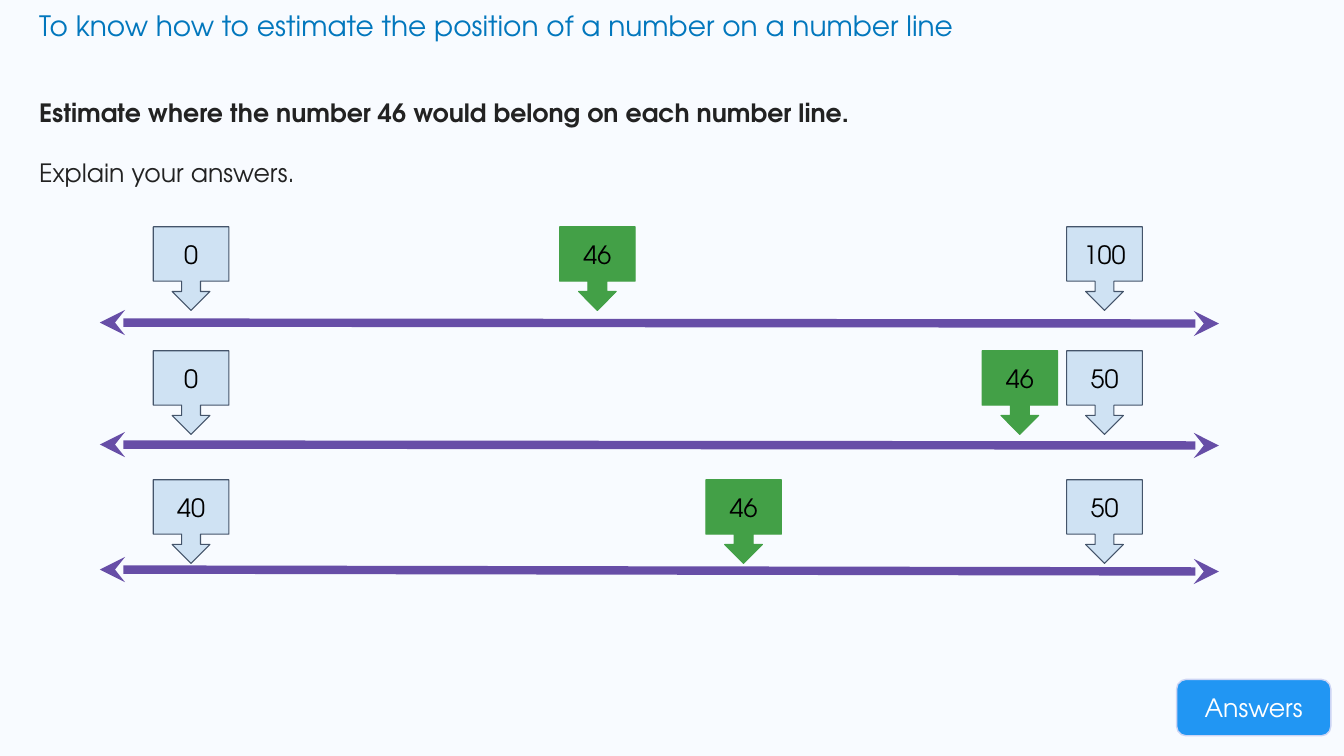
"""Build a slide on estimating the position of 46 on three number lines."""
from lxml import etree
from pptx import Presentation
from pptx.dml.color import RGBColor
from pptx.enum import shapes, text
from pptx.oxml import ns
from pptx.util import Inches, Pt

FONT = "TeX Gyre Adventor"
BACKGROUND = RGBColor(0xF8, 0xFB, 0xFF)
TITLE_BLUE = RGBColor(0x02, 0x77, 0xBD)
INK = RGBColor(0x22, 0x22, 0x22)
BLACK = RGBColor(0, 0, 0)
WHITE = RGBColor(0xFF, 0xFF, 0xFF)
BUTTON_BLUE = RGBColor(0x21, 0x96, 0xF3)
BUTTON_EDGE = RGBColor(0xCC, 0xD4, 0xF4)
PURPLE = RGBColor(0x67, 0x4E, 0xA7)
PALE_BLUE = RGBColor(0xCF, 0xE2, 0xF3)
SLATE = RGBColor(0x44, 0x54, 0x6A)
GREEN = RGBColor(0x43, 0xA0, 0x47)

START_LEFT, END_LEFT = 1.52, 10.58
NUMBER_LINES = [
    {"top": 2.25, "line": (3.2, 3.21), "ends": ("0", "100"), "answer_left": 5.55},
    {"top": 3.48, "line": (4.41, 4.42), "ends": ("0", "50"), "answer_left": 9.74},
    {"top": 4.76, "line": (5.65, 5.67), "ends": ("40", "50"), "answer_left": 7},
]


def write(paragraph, words, color, size=18, **formats):
    """Put words in a paragraph and format it."""
    span = paragraph.add_run()
    span.text = words
    span.font.name = FONT
    span.font.size = Pt(size)
    span.font.color.rgb = color
    span.font.bold = formats.pop("bold", False)
    for name, value in formats.items():
        setattr(paragraph, name, value)


def add_text_box(page, place):
    """Add a wrapping text box and return its text frame."""
    frame = page.shapes.add_textbox(*map(Inches, place)).text_frame
    frame.word_wrap = True
    return frame


def add_label(page, kind, place, words, colors, adjustments, line_width, inset):
    """Add a filled preset shape with a centred label."""
    fill, edge, ink = colors
    shape = page.shapes.add_shape(kind, *map(Inches, place))
    shape.shadow.inherit = False
    for index, value in enumerate(adjustments):
        shape.adjustments[index] = value
    shape.fill.solid()
    shape.fill.fore_color.rgb = fill
    shape.line.color.rgb = edge
    shape.line.width = Pt(line_width)
    formats = {
        "margin_top": Inches(inset),
        "margin_bottom": Inches(inset),
        "vertical_anchor": text.MSO_ANCHOR.MIDDLE,
        "word_wrap": True,
    }
    for name, value in formats.items():
        setattr(shape.text_frame, name, value)
    write(shape.text_frame.paragraphs[0], words, ink, alignment=text.PP_ALIGN.CENTER)


def add_marker(page, left, top, words, fill, edge):
    """Add a callout that points down at a number line."""
    add_label(page, shapes.MSO_SHAPE.DOWN_ARROW_CALLOUT, (left, top, 0.75, 0.83),
              words, (fill, edge, BLACK), (0.25, 0.25, 0.25, 0.65), 0.75, 0.1)


def add_double_arrow(page, start_y, end_y):
    """Add a thick line with an arrowhead at each end."""
    ends = map(Inches, (0.99, start_y, 12.09, end_y))
    arrow = page.shapes.add_connector(shapes.MSO_CONNECTOR.STRAIGHT, *ends)
    arrow.line.color.rgb = PURPLE
    arrow.line.width = Pt(6)
    outline = arrow.line._get_or_add_ln()
    for tag in ("a:headEnd", "a:tailEnd"):
        etree.SubElement(outline, ns.qn(tag), type="stealth")
    etree.SubElement(arrow._element.spPr, ns.qn("a:effectLst"))


def add_number_line(page, top, line, ends, answer_left):
    """Add a number line with its end markers and the answer."""
    add_double_arrow(page, *line)
    for left, words in zip((START_LEFT, END_LEFT), ends):
        add_marker(page, left, top, words, PALE_BLUE, SLATE)
    add_marker(page, answer_left, top, "46", GREEN, GREEN)


def main():
    """Build and save the deck."""
    deck = Presentation()
    deck.slide_width, deck.slide_height = Inches(13.33), Inches(7.5)
    page = deck.slides.add_slide(deck.slide_layouts[6])
    page.background.fill.solid()
    page.background.fill.fore_color.rgb = BACKGROUND

    title = add_text_box(page, (0.29, 0.04, 12.34, 0.44))
    write(title.paragraphs[0],
          "To know how to estimate the position of a number on a number line",
          TITLE_BLUE, size=20)
    task = add_text_box(page, (0.29, 0.77, 12.84, 1.19))
    write(task.paragraphs[0],
          "Estimate where the number 46 would belong on each number line.",
          INK, bold=True, line_spacing=1.5)
    write(task.add_paragraph(), "Explain your answers.", INK,
          line_spacing=1.5, space_before=Pt(10))

    for number_line in NUMBER_LINES:
        add_number_line(page, **number_line)
    add_label(page, shapes.MSO_SHAPE.ROUNDED_RECTANGLE, (11.67, 6.74, 1.53, 0.56),
              "Answers", (BUTTON_BLUE, BUTTON_EDGE, WHITE), (0.17,), 1, 0.05)
    deck.save("out.pptx")


if __name__ == "__main__":
    main()
